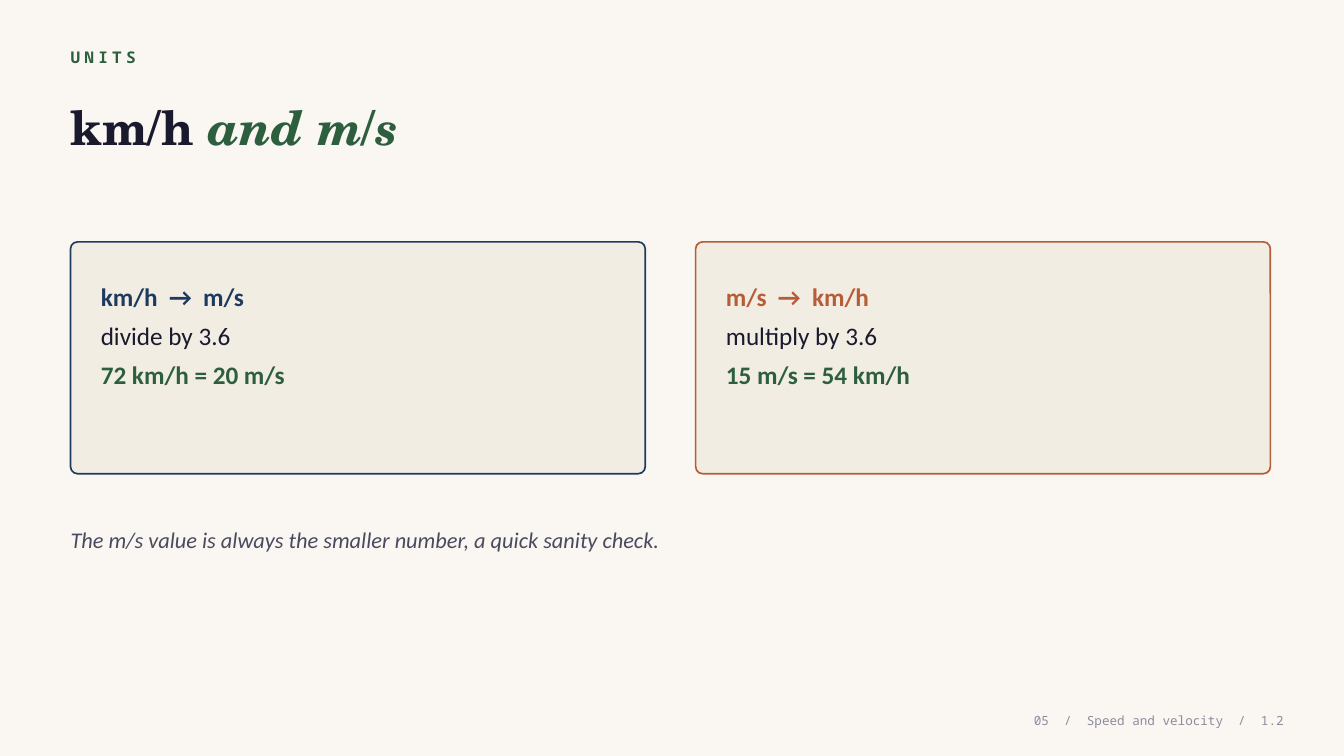
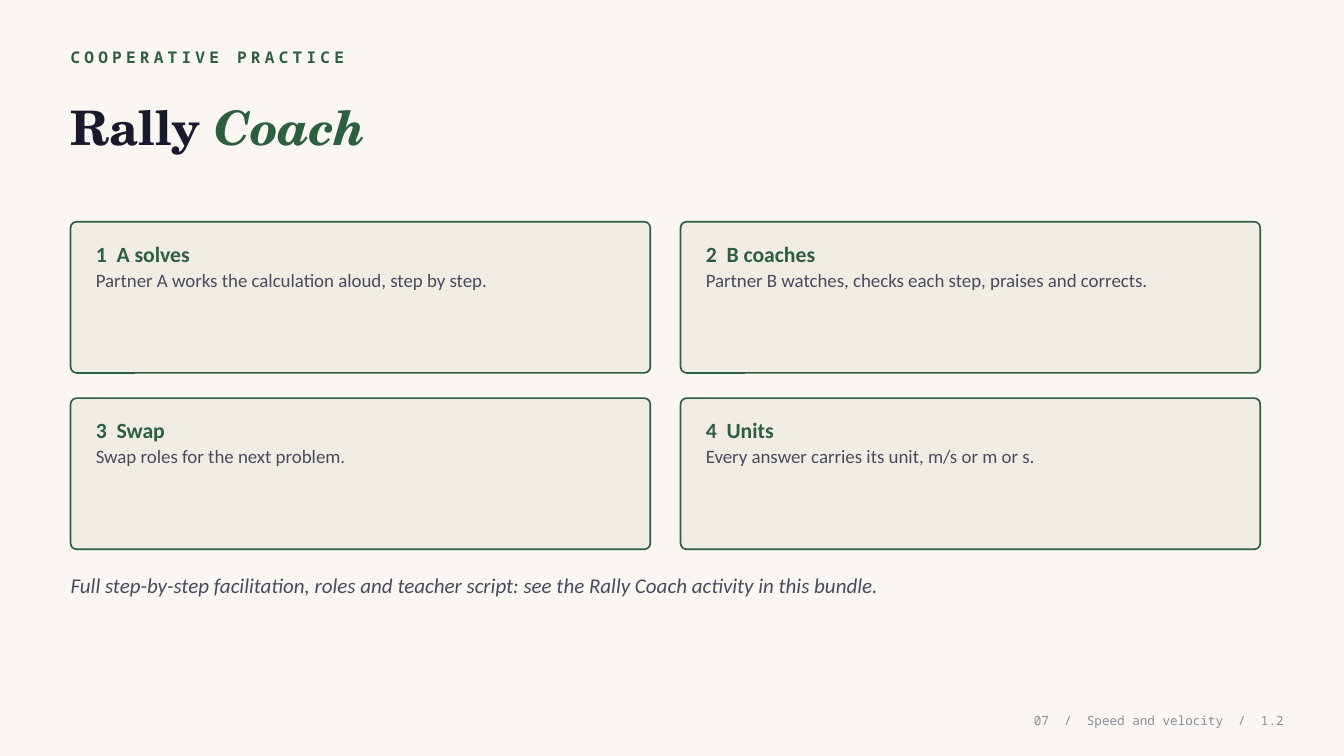
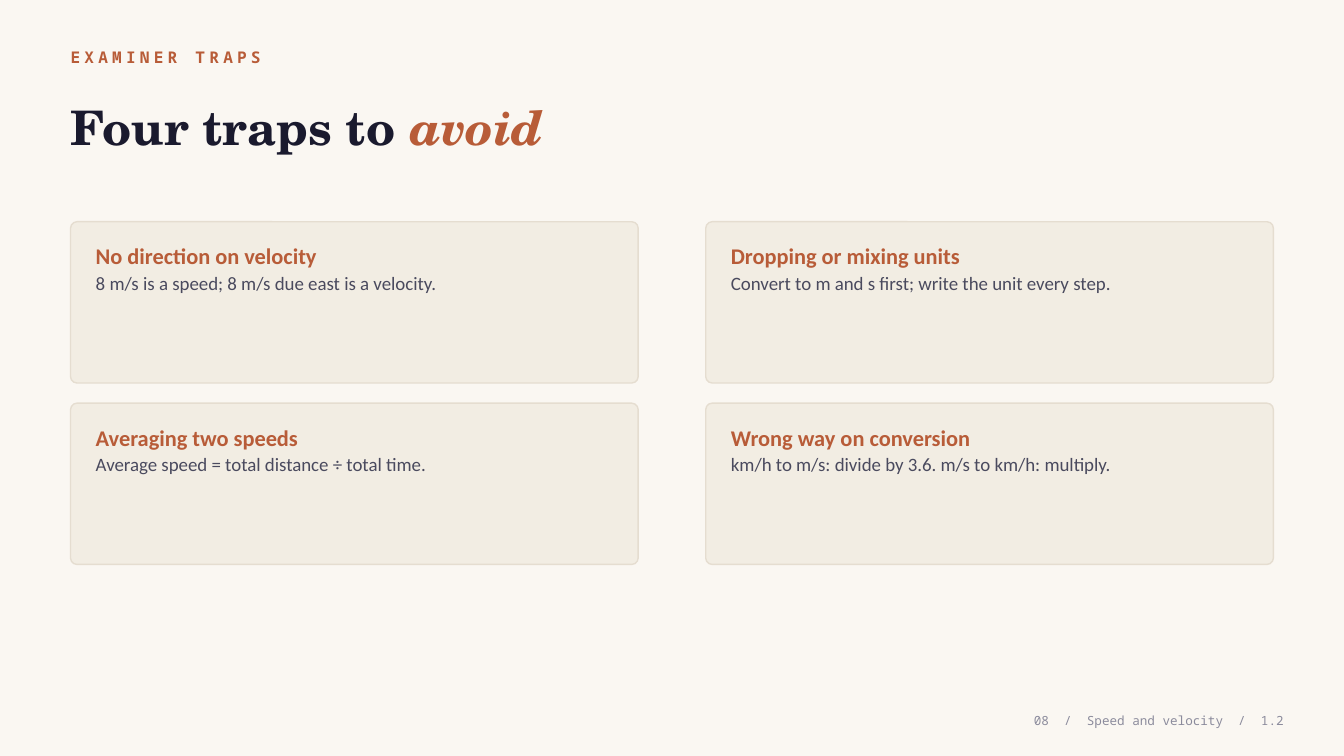
from pptx import Presentation
from pptx.dml.color import RGBColor
from pptx.enum.shapes import MSO_SHAPE
from pptx.enum.text import MSO_ANCHOR, PP_ALIGN
from pptx.util import Inches, Pt

ROUNDED = MSO_SHAPE.ROUNDED_RECTANGLE
TOP, MIDDLE = MSO_ANCHOR.TOP, MSO_ANCHOR.MIDDLE
LEFT, RIGHT = PP_ALIGN.LEFT, PP_ALIGN.RIGHT

COLORS = {
    "paper": "FAF7F2",
    "card": "F2EDE3",
    "border": "E5DDD0",
    "ink": "1A1A2E",
    "body": "4A4A5E",
    "muted": "8B8B9C",
    "green": "2D5F3F",
    "navy": "1E3A5F",
    "rust": "B85C38",
}
EYEBROW = {"name": "Noto Sans Mono", "size": Pt(11.5), "bold": True}
TITLE = {"name": "TeX Gyre Schola", "size": Pt(34), "bold": True}
TITLE_ACCENT = {**TITLE, "italic": True}
FOOTER = {"name": "Noto Sans Mono", "size": Pt(9)}
RULE = {"name": "Calibri", "size": Pt(18)}
RULE_BOLD = {**RULE, "bold": True}
DETAIL = {"name": "Calibri", "size": Pt(13.5)}
STEP = {"name": "Calibri", "size": Pt(15.5), "bold": True}
TRAP = {"name": "Calibri", "size": Pt(16), "bold": True}
UNITS_NOTE = {"name": "Calibri", "size": Pt(16), "italic": True}
COACH_NOTE = {**UNITS_NOTE, "size": Pt(15)}

MARGIN, CONTENT_WIDTH = 0.7, 11.93


def add_text(slide, box, paragraphs, anchor=MIDDLE, align=LEFT, spacing=None, tracking=None):
    frame = slide.shapes.add_textbox(*map(Inches, box)).text_frame
    settings = {"word_wrap": True, "vertical_anchor": anchor, "margin_left": 0,
                "margin_right": 0, "margin_top": 0, "margin_bottom": 0}
    for key, value in settings.items():
        setattr(frame, key, value)
    for index, runs in enumerate(paragraphs):
        paragraph = frame.add_paragraph() if index else frame.paragraphs[0]
        paragraph.alignment = align
        paragraph.line_spacing = spacing
        for words, style, color in runs:
            run = paragraph.add_run()
            run.text = words
            for key, value in style.items():
                setattr(run.font, key, value)
            run.font.color.rgb = RGBColor.from_string(COLORS[color])
            if tracking:
                run.font._element.set("spc", str(tracking))


def add_cards(slide, grid, cards):
    width, height = grid["size"]
    inset_x, inset_y = grid["inset"]
    for index, (border, lines) in enumerate(cards):
        row, column = divmod(index, 2)
        left = MARGIN + column * (width + grid["gap"][0])
        top = grid["top"] + row * (height + grid["gap"][1])
        card = slide.shapes.add_shape(ROUNDED, *map(Inches, (left, top, width, height)))
        card.adjustments[0] = grid["corner"]
        card.shadow.inherit = False
        card.fill.solid()
        card.fill.fore_color.rgb = RGBColor.from_string(COLORS["card"])
        card.line.color.rgb = RGBColor.from_string(COLORS[border])
        card.line.width = Pt(grid["line"])
        box = (left + inset_x, top + inset_y, width - 2 * inset_x, grid["text_height"])
        add_text(slide, box, [[line] for line in lines], TOP, spacing=grid["spacing"])


conversions = [
    ("navy", "km/h  →  m/s", "divide by 3.6", "72 km/h = 20 m/s"),
    ("rust", "m/s  →  km/h", "multiply by 3.6", "15 m/s = 54 km/h"),
]
steps = [
    ("1  A solves", "Partner A works the calculation aloud, step by step."),
    ("2  B coaches", "Partner B watches, checks each step, praises and corrects."),
    ("3  Swap", "Swap roles for the next problem."),
    ("4  Units", "Every answer carries its unit, m/s or m or s."),
]
traps = [
    ("No direction on velocity", "8 m/s is a speed; 8 m/s due east is a velocity."),
    ("Dropping or mixing units", "Convert to m and s first; write the unit every step."),
    ("Averaging two speeds", "Average speed = total distance ÷ total time."),
    ("Wrong way on conversion", "km/h to m/s: divide by 3.6. m/s to km/h: multiply."),
]

lessons = [
    {
        "number": "05", "eyebrow": "UNITS", "title": ("km/h ", "and m/s"), "accent": "green",
        "grid": {"top": 2.4, "size": (5.7, 2.3), "gap": (0.5, 0), "inset": (0.3, 0.3),
                 "text_height": 1.8, "corner": 0.03, "line": 1.2, "spacing": 1.3},
        "cards": [(color, [(heading, RULE_BOLD, color), (rule, RULE, "ink"),
                           (example, RULE_BOLD, "green")])
                  for color, heading, rule, example in conversions],
        "note": (5.1, "The m/s value is always the smaller number, a quick sanity check.",
                 UNITS_NOTE),
    },
    {
        "number": "07", "eyebrow": "COOPERATIVE PRACTICE", "title": ("Rally ", "Coach"),
        "accent": "green",
        "grid": {"top": 2.2, "size": (5.75, 1.5), "gap": (0.3, 0.25), "inset": (0.25, 0.16),
                 "text_height": 1.2, "corner": 0.04, "line": 1.2, "spacing": 1.1},
        "cards": [("green", [(heading, STEP, "green"), (detail, DETAIL, "body")])
                  for heading, detail in steps],
        "note": (5.55, "Full step-by-step facilitation, roles and teacher script: "
                 "see the Rally Coach activity in this bundle.", COACH_NOTE),
    },
    {
        "number": "08", "eyebrow": "EXAMINER TRAPS", "title": ("Four traps to ", "avoid"),
        "accent": "rust",
        "grid": {"top": 2.2, "size": (5.63, 1.6), "gap": (0.67, 0.2), "inset": (0.25, 0.18),
                 "text_height": 1.24, "corner": 0.04, "line": 1, "spacing": 1.1},
        "cards": [("border", [(heading, TRAP, "rust"), (detail, DETAIL, "body")])
                  for heading, detail in traps],
        "note": None,
    },
]

deck = Presentation()
deck.slide_width, deck.slide_height = Inches(13.33), Inches(7.5)
backdrop = deck.slide_master.background.fill
backdrop.solid()
backdrop.fore_color.rgb = RGBColor.from_string(COLORS["paper"])

for lesson in lessons:
    slide = deck.slides.add_slide(deck.slide_layouts[6])
    accent = lesson["accent"]
    lead, emphasis = lesson["title"]
    add_text(slide, (MARGIN, 0.42, CONTENT_WIDTH, 0.3),
             [[(lesson["eyebrow"], EYEBROW, accent)]], tracking=300)
    add_text(slide, (MARGIN, 0.78, CONTENT_WIDTH, 0.95),
             [[(lead, TITLE, "ink"), (emphasis, TITLE_ACCENT, accent)]])
    add_cards(slide, lesson["grid"], lesson["cards"])
    if lesson["note"]:
        note_top, note, note_style = lesson["note"]
        add_text(slide, (MARGIN, note_top, CONTENT_WIDTH, 0.5), [[(note, note_style, "body")]])
    footer = f"{lesson['number']}  /  Speed and velocity  /  1.2"
    add_text(slide, (9.03, 7, 3.7, 0.3), [[(footer, FOOTER, "muted")]], align=RIGHT)

deck.save("out.pptx")
